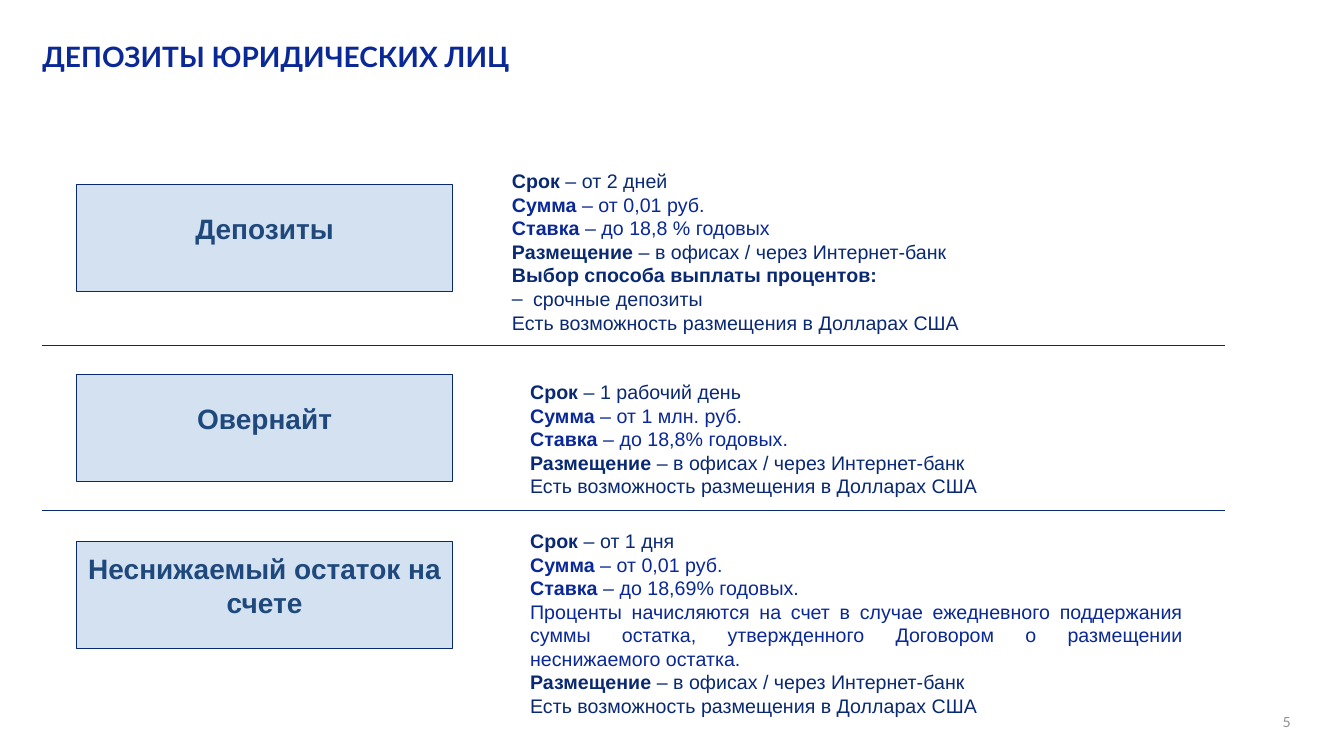
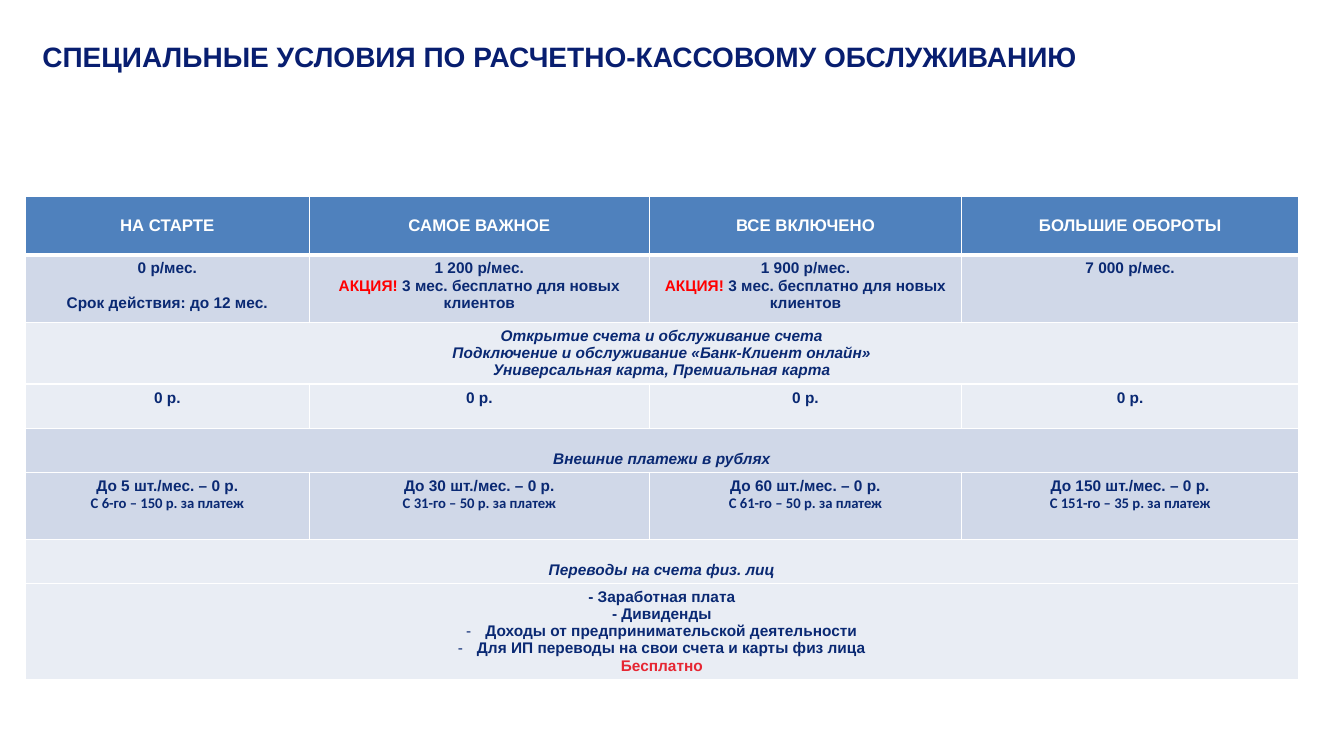
from dataclasses import dataclass
from typing import Optional

from lxml.etree import SubElement
from pptx import Presentation
from pptx.dml.color import RGBColor
from pptx.enum.shapes import MSO_CONNECTOR as Connector, MSO_SHAPE as Shape
from pptx.enum.text import MSO_ANCHOR as Anchor, MSO_AUTO_SIZE as AutoSize, PP_ALIGN as Align
from pptx.oxml.ns import qn
from pptx.util import Inches, Pt


@dataclass(frozen=True)
class Theme:
    navy: str = "0A2973"
    blue: str = "0A2896"
    deep: str = "081E70"
    label: str = "1F497D"
    box: str = "D4E1F0"
    header: str = "4F81BD"
    band: str = "D0D8E8"
    pale: str = "E9EDF4"
    white: str = "FFFFFF"
    grey: str = "909090"
    promo: str = "FF0000"
    free: str = "E62632"
    sans: str = "Arial"
    title_sans: str = "Lato"
    note_sans: str = "Calibri"
    title_size: float = 20
    body_size: float = 14
    header_size: float = 12
    cell_size: float = 11
    note_size: float = 10.5
    number_size: float = 10


THEME = Theme()


@dataclass(frozen=True)
class Span:
    text: str
    color: str = THEME.navy
    size: float = THEME.cell_size
    bold: bool = True
    italic: bool = False
    font: str = THEME.sans


@dataclass(frozen=True)
class Line:
    spans: tuple
    align: Align = Align.CENTER
    before: float = 0
    bullet: Optional[str] = None
    indent: float = 0


def rgb(value):
    return RGBColor.from_string(value)


def add_bullet(paragraph, char, indent):
    props = paragraph._p.get_or_add_pPr()
    props.set("marL", str(Inches(indent)))
    props.set("indent", str(-Inches(indent)))
    SubElement(props, qn("a:buFont")).set("typeface", THEME.sans)
    SubElement(props, qn("a:buChar")).set("char", char)


def write_lines(frame, lines):
    for index, line in enumerate(lines):
        paragraph = frame.add_paragraph() if index else frame.paragraphs[0]
        paragraph.alignment = line.align
        if line.before:
            paragraph.space_before = Pt(line.before)
        if line.bullet:
            add_bullet(paragraph, line.bullet, line.indent)
        for span in line.spans:
            run = paragraph.add_run()
            run.text = span.text
            run.font.name = span.font
            run.font.size = Pt(span.size)
            run.font.bold = span.bold
            run.font.italic = span.italic
            run.font.color.rgb = rgb(span.color)


def add_titled_slide(prs, text, width, color, font):
    slide = prs.slides.add_slide(prs.slide_layouts[5])
    title = slide.shapes.title
    title.left, title.top = Inches(0.42), Inches(0.43)
    title.width, title.height = Inches(width), Inches(0.3)
    frame = title.text_frame
    frame.auto_size = AutoSize.NONE
    frame.word_wrap = True
    frame.vertical_anchor = Anchor.TOP
    frame.margin_left = frame.margin_top = frame.margin_right = frame.margin_bottom = 0
    write_lines(frame, [Line((Span(text, color, THEME.title_size, font=font),), Align.LEFT)])
    frame.paragraphs[0].line_spacing = 0.9
    return slide


def add_text(slide, left, top, width, height, lines):
    frame = slide.shapes.add_textbox(
        Inches(left), Inches(top), Inches(width), Inches(height)).text_frame
    frame.word_wrap = True
    write_lines(frame, lines)
    return frame


def add_product_box(slide, top, name):
    box = slide.shapes.add_shape(
        Shape.RECTANGLE, Inches(0.76), Inches(top), Inches(3.73), Inches(1.06))
    box.shadow.inherit = False
    box.fill.solid()
    box.fill.fore_color.rgb = rgb(THEME.box)
    box.line.color.rgb = rgb(THEME.navy)
    box.line.width = Pt(0.75)
    frame = box.text_frame
    frame.word_wrap = True
    frame.vertical_anchor = Anchor.MIDDLE
    frame.margin_bottom = Inches(0.24)
    write_lines(frame, [Line((Span(name, THEME.label, THEME.title_size),))])


def add_divider(slide, top):
    divider = slide.shapes.add_connector(
        Connector.STRAIGHT, Inches(0.42), Inches(top), Inches(12.15), Inches(top))
    divider.line.color.rgb = rgb(THEME.navy)
    divider.line.width = Pt(0.75)
    SubElement(divider._element.spPr, qn("a:effectLst"))


def add_slide_number(slide, number):
    span = Span(number, THEME.grey, THEME.number_size, False, font=THEME.title_sans)
    frame = add_text(slide, 9.99, 7.08, 2.91, 0.42, [Line((span,), Align.RIGHT)])
    frame.margin_top = 0


def term(label, value="", color=THEME.navy):
    spans = [Span(label, color, THEME.body_size)]
    if value:
        spans.append(Span(f" – {value}", color, THEME.body_size, False))
    return Line(tuple(spans), Align.JUSTIFY)


def remark(text, color=THEME.navy, align=Align.JUSTIFY, **options):
    return Line((Span(text, color, THEME.body_size, False),), align, **options)


def conditions(period, amount, rate):
    return [term("Срок", period), term("Сумма", amount, THEME.blue),
            term("Ставка", rate, THEME.blue)]


def build_deposits(prs):
    slide = add_titled_slide(
        prs, "ДЕПОЗИТЫ ЮРИДИЧЕСКИХ ЛИЦ", 11.11, THEME.blue, THEME.title_sans)
    placement = term("Размещение", "в офисах / через Интернет-банк")
    dollars = remark("Есть возможность размещения в Долларах США")
    products = [
        ("Депозиты", 1.83, (4.98, 1.63, 6.67, 1.75),
         conditions("от 2 дней", "от 0,01 руб.", "до 18,8 % годовых")
         + [placement, term("Выбор способа выплаты процентов:"),
            remark("срочные депозиты", align=Align.LEFT, bullet="–", indent=0.21), dollars]),
        ("Овернайт", 3.72, (5.16, 3.72, 6.67, 1.28),
         conditions("1 рабочий день", "от 1 млн. руб.", "до 18,8% годовых.")
         + [placement, dollars]),
        ("Неснижаемый остаток на счете", 5.37, (5.16, 5.2, 6.67, 1.99),
         conditions("от 1 дня", "от 0,01 руб.", "до 18,69% годовых.")
         + [remark("Проценты начисляются на счет в случае ежедневного поддержания суммы "
                   "остатка, утвержденного Договором о размещении неснижаемого остатка.",
                   THEME.blue), placement, dollars]),
    ]
    for name, top, area, lines in products:
        add_product_box(slide, top, name)
        add_text(slide, *area, lines)
    for top in (3.43, 5.06):
        add_divider(slide, top)
    add_slide_number(slide, "5")


def cell_line(text, **style):
    return Line((Span(text, **style),))


def promo_lines(price):
    return [cell_line(price), Line((Span("АКЦИЯ!", THEME.promo),
                                    Span(" 3 мес. бесплатно для новых клиентов")))]


def payment_lines(limit, following, price):
    return [cell_line(f"До {limit} шт./мес. – 0 р."),
            cell_line(f"С {following}-го – {price} р. за платеж",
                      size=THEME.note_size, font=THEME.note_sans)]


def heading_lines(*texts):
    return [cell_line(text, italic=True) for text in texts]


def set_borders(cell, top, bottom):
    props = cell._tc.get_or_add_tcPr()
    for side, width in (("L", 1), ("R", 1), ("T", top), ("B", bottom)):
        border = SubElement(props, qn(f"a:ln{side}"), w=str(Pt(width)))
        fill = SubElement(border, qn("a:solidFill"))
        SubElement(fill, qn("a:srgbClr"), val=THEME.white)


def add_tariff_table(slide, widths, rows):
    table = slide.shapes.add_table(
        len(rows), len(widths), Inches(0.25), Inches(1.95),
        Inches(sum(widths)), Inches(sum(row[0] for row in rows))).table
    for column, width in zip(table.columns, widths):
        column.width = Inches(width)
    last = len(widths) - 1
    for index, (height, fill, anchor, contents) in enumerate(rows):
        table.rows[index].height = Inches(height)
        for column in range(len(widths)):
            cell = table.cell(index, column)
            set_borders(cell, 3 if index == 1 else 1, 3 if index == 0 else 1)
            cell.fill.solid()
            cell.fill.fore_color.rgb = rgb(fill)
            cell.vertical_anchor = anchor
        if len(contents) == 1:
            table.cell(index, 0).merge(table.cell(index, last))
        for column, lines in enumerate(contents):
            write_lines(table.cell(index, column).text_frame, lines)


def build_tariffs(prs):
    slide = add_titled_slide(
        prs, "СПЕЦИАЛЬНЫЕ УСЛОВИЯ ПО РАСЧЕТНО-КАССОВОМУ ОБСЛУЖИВАНИЮ",
        10.56, THEME.deep, THEME.sans)
    widths = (2.82, 3.37, 3.1, 3.34)
    plans = [[cell_line(name, color=THEME.white, size=THEME.header_size)] for name in
             ("НА СТАРТЕ", "САМОЕ ВАЖНОЕ", "ВСЕ ВКЛЮЧЕНО", "БОЛЬШИЕ ОБОРОТЫ")]
    prices = [
        [cell_line("0 р/мес."), Line((Span("Срок действия: до 12 мес."),), before=12.6)],
        promo_lines("1 200 р/мес."),
        promo_lines("1 900 р/мес."),
        [cell_line("7 000 р/мес.")],
    ]
    services = heading_lines("Открытие счета и обслуживание счета",
                             "Подключение и обслуживание «Банк-Клиент онлайн»",
                             "Универсальная карта, Премиальная карта")
    payments = [payment_lines(*terms) for terms in
                ((5, 6, 150), (30, 31, 50), (60, 61, 50), (150, 151, 35))]
    transfers = [cell_line("- Заработная плата"), cell_line("- Дивиденды")]
    transfers += [Line((Span(text),), bullet="-", indent=0.19) for text in
                  ("Доходы от предпринимательской деятельности",
                   "Для ИП переводы на свои счета и карты физ лица")]
    transfers.append(cell_line("Бесплатно", color=THEME.free))
    add_tariff_table(slide, widths, [
        (0.58, THEME.header, Anchor.MIDDLE, plans),
        (0.67, THEME.band, Anchor.TOP, prices),
        (0.61, THEME.pale, Anchor.TOP, [services]),
        (0.44, THEME.pale, Anchor.TOP, [[cell_line("0 р.")] for _ in widths]),
        (0.44, THEME.band, Anchor.BOTTOM, [heading_lines("Внешние платежи в рублях")]),
        (0.66, THEME.band, Anchor.TOP, payments),
        (0.44, THEME.pale, Anchor.BOTTOM, [heading_lines("Переводы на счета физ. лиц")]),
        (0.95, THEME.pale, Anchor.TOP, [transfers]),
    ])


def main():
    prs = Presentation()
    prs.slide_width, prs.slide_height = Inches(13.33), Inches(7.5)
    build_deposits(prs)
    build_tariffs(prs)
    prs.save("out.pptx")


if __name__ == "__main__":
    main()
